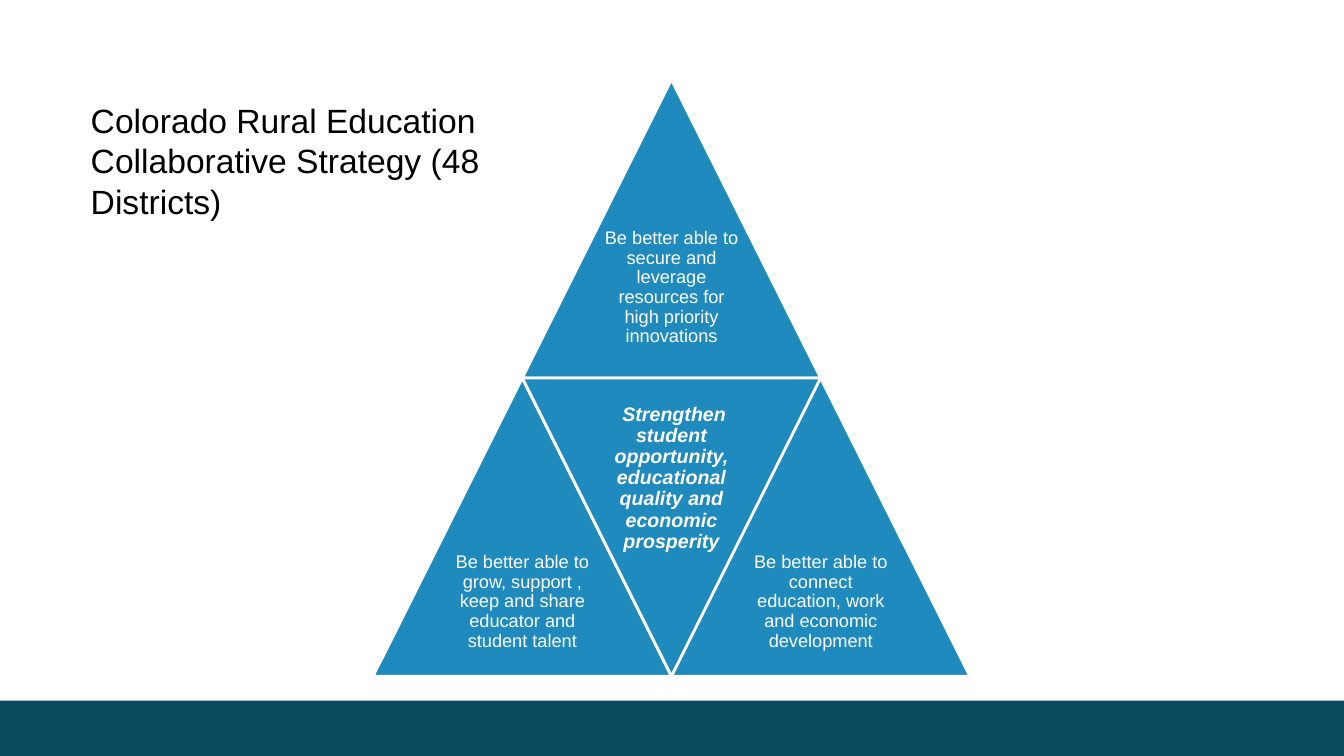
from pptx import Presentation
from pptx.dml.color import RGBColor
from pptx.enum.shapes import MSO_SHAPE
from pptx.enum.text import MSO_ANCHOR, PP_ALIGN
from pptx.util import Inches, Pt

W, H = 13.33, 7.5
SIDE = 2.96                 # width and height of one small triangle
LEFT, TOP = 3.7, 0.79       # corner of the whole pyramid
BLUE, TEAL, WHITE, BLACK = "1E8ABD", "0B495F", "FFFFFF", "000000"


def rgb(value):
    return RGBColor.from_string(value)


def write(tf, text, anchor, align, insets, spacing, font):
    tf.word_wrap = True
    tf.vertical_anchor = anchor
    sides = ("margin_left", "margin_top", "margin_right", "margin_bottom")
    for side, inset in zip(sides, insets):
        setattr(tf, side, Inches(inset))
    p = tf.paragraphs[0]
    p.alignment, p.line_spacing = align, spacing
    r = p.add_run()
    r.text = text
    r.font.color.rgb = rgb(font["color"])
    for name in ("size", "bold", "italic"):
        setattr(r.font, name, font[name])
    r.font.name = "Arial"


prs = Presentation()
prs.slide_width, prs.slide_height = Inches(W), Inches(H)
s = prs.slides.add_slide(prs.slide_layouts[5])

# Footer band
band = s.shapes.add_shape(MSO_SHAPE.RECTANGLE, 0, Inches(6.95), Inches(W), Inches(0.55))
band.shadow.inherit = False
band.fill.solid()
band.fill.fore_color.rgb = rgb(TEAL)
band.line.fill.background()

# Pyramid: column in half sides, row in sides, rotation, text, anchor, insets, font
plain = {"size": Pt(13), "bold": False, "italic": False, "color": WHITE}
strong = {"size": Pt(14), "bold": True, "italic": True, "color": WHITE}
parts = [
    (1, 0, 0, "Be better able to secure and leverage resources for high priority innovations",
     MSO_ANCHOR.TOP, (0.05, 0, 0.05, 0.05), plain),
    (0, 1, 0, "Be better able to grow, support , keep and share educator and student talent",
     MSO_ANCHOR.MIDDLE, (0.04, 0.04, 0.04, 0.04), plain),
    (1, 1, 180, " Strengthen student opportunity, educational quality and economic prosperity",
     MSO_ANCHOR.TOP, (0, 0.26, 0, 0), strong),
    (2, 1, 0, "Be better able to connect education, work and economic development",
     MSO_ANCHOR.MIDDLE, (0.05, 0.05, 0.05, 0.05), plain),
]
for col, row, turn, text, anchor, insets, font in parts:
    x, y = LEFT + col * SIDE / 2, TOP + row * SIDE
    sp = s.shapes.add_shape(MSO_SHAPE.ISOSCELES_TRIANGLE,
                            Inches(x), Inches(y), Inches(SIDE), Inches(SIDE))
    sp.rotation = turn
    sp.shadow.inherit = False
    sp.fill.solid()
    sp.fill.fore_color.rgb = rgb(BLUE)
    sp.line.color.rgb = rgb(WHITE)
    sp.line.width = Pt(2)

    # The label fills the wide half of its triangle
    label_y = y if turn else y + SIDE / 2
    box = s.shapes.add_textbox(Inches(x + SIDE / 4), Inches(label_y),
                               Inches(SIDE / 2), Inches(SIDE / 2))
    write(box.text_frame, text, anchor, PP_ALIGN.CENTER, insets, 0.9, font)

# Title
title = s.shapes.title
title.left, title.top, title.width, title.height = (Inches(v) for v in (0.8, 0.94, 4.23, 1.31))
write(title.text_frame, "Colorado Rural Education Collaborative Strategy (48 Districts)",
      MSO_ANCHOR.TOP, PP_ALIGN.LEFT, (0.1, 0.05, 0.1, 0.05), 1.0,
      {"size": Pt(24), "bold": False, "italic": False, "color": BLACK})

prs.save("out.pptx")
